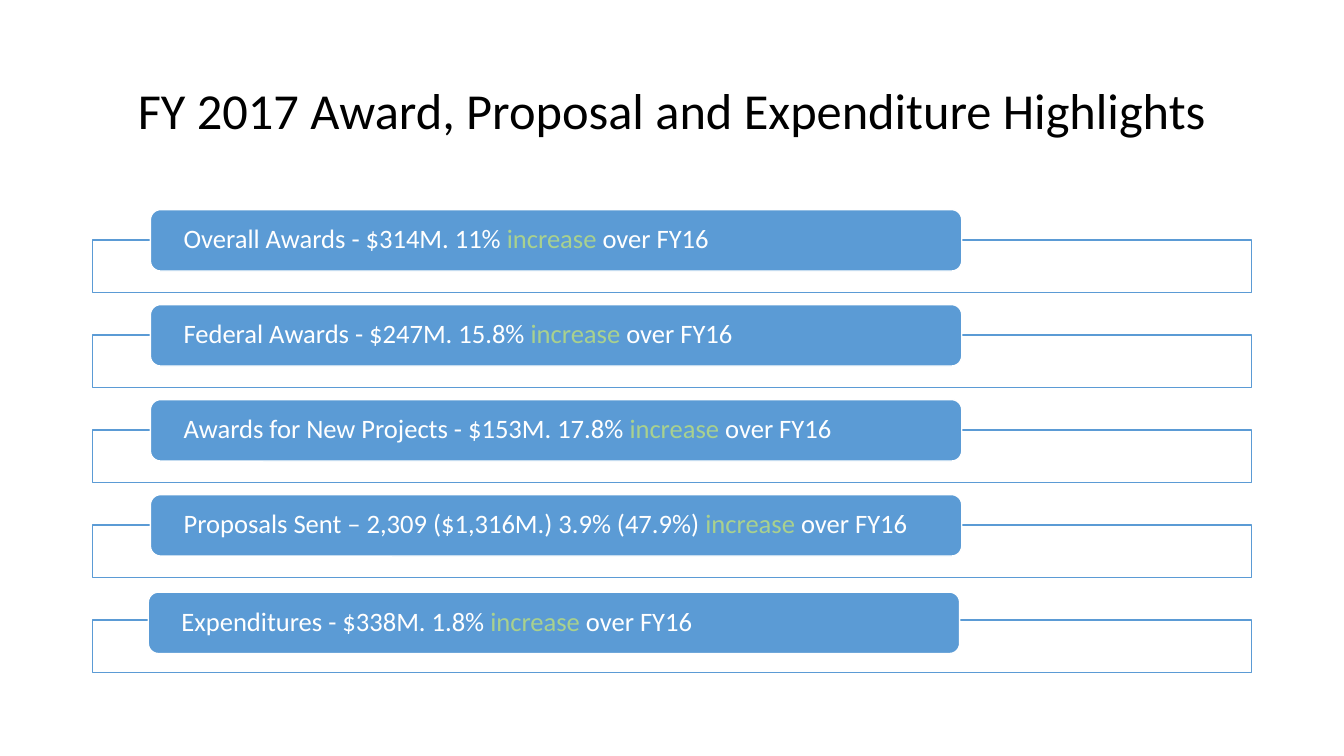
from pptx import Presentation
from pptx.dml.color import RGBColor
from pptx.enum.shapes import MSO_SHAPE
from pptx.enum.text import MSO_ANCHOR, MSO_AUTO_SIZE, PP_ALIGN
from pptx.oxml.ns import qn
from pptx.util import Pt
from lxml.etree import SubElement


def paint(target, code):
    target.rgb = RGBColor.from_string(code)


class Deck:
    font = "Calibri"
    blue = "5B9BD5"
    green = "A9D18E"
    white = "FFFFFF"
    black = "000000"

    def __init__(self, slide):
        self.slide = slide

    def style(self, run, size, code):
        run.font.name = self.font
        run.font.size = Pt(size)
        paint(run.font.color, code)

    def title(self, text, left, top, width, height):
        box = self.slide.shapes.title
        box.left, box.top = Pt(left), Pt(top)
        box.width, box.height = Pt(width), Pt(height)
        frame = box.text_frame
        frame.text = text
        frame.word_wrap = True
        frame.auto_size = MSO_AUTO_SIZE.NONE
        frame.vertical_anchor = MSO_ANCHOR.MIDDLE
        para = frame.paragraphs[0]
        para.alignment = PP_ALIGN.CENTER
        para.line_spacing = 0.9
        self.style(para.runs[0], 36, self.black)

    def shape(self, kind, left, top, width, height, fill, line):
        item = self.slide.shapes.add_shape(
            kind, Pt(left), Pt(top), Pt(width), Pt(height))
        item.shadow.inherit = False
        item.fill.solid()
        paint(item.fill.fore_color, fill)
        paint(item.line.color, line)
        item.line.width = Pt(1)
        return item

    def frame(self, left, top, width, height):
        item = self.shape(MSO_SHAPE.RECTANGLE, left, top, width, height,
                          self.white, self.blue)
        tint = item.fill._xPr.find(qn("a:solidFill"))[0]
        SubElement(tint, qn("a:alpha"), val="90000")

    def pill(self, parts, left, top, width, height):
        item = self.shape(MSO_SHAPE.ROUNDED_RECTANGLE, left, top, width,
                          height, self.blue, self.white)
        box = item.text_frame
        box.word_wrap = True
        box.vertical_anchor = MSO_ANCHOR.MIDDLE
        box.margin_left = box.margin_right = Pt(21.6)
        box.margin_top = box.margin_bottom = Pt(0)
        para = box.paragraphs[0]
        para.alignment = PP_ALIGN.LEFT
        para.line_spacing = 0.9
        for text, code in parts:
            run = para.add_run()
            run.text = text
            self.style(run, 19, code)


def main():
    show = Presentation()
    show.slide_width, show.slide_height = Pt(960), Pt(540)
    deck = Deck(show.slides.add_slide(show.slide_layouts[5]))
    deck.title("FY 2017 Award, Proposal and Expenditure Highlights",
               66, 28.8, 828, 104.4)
    rows = [
        ("Overall Awards - $314M. 11% ", 0, 0),
        ("Federal Awards - $247M. 15.8% ", 0, 0),
        ("Awards for New Projects - $153M. 17.8% ", 0, 0),
        ("Proposals Sent – 2,309 ($1,316M.) 3.9% (47.9%) ", 0, 0),
        ("Expenditures - $338M. 1.8% ", -1.5, 1.8),
    ]
    for index, (fact, right, down) in enumerate(rows):
        top = 171.3 + index * 67.86
        deck.frame(66, top, 828, 37.8)
        parts = [(fact, deck.white), ("increase", deck.green),
                 (" over FY16", deck.white)]
        deck.pill(parts, 107.4 + right, top - 21.6 + down, 579.6, 43.9)
    show.save("out.pptx")


if __name__ == "__main__":
    main()
